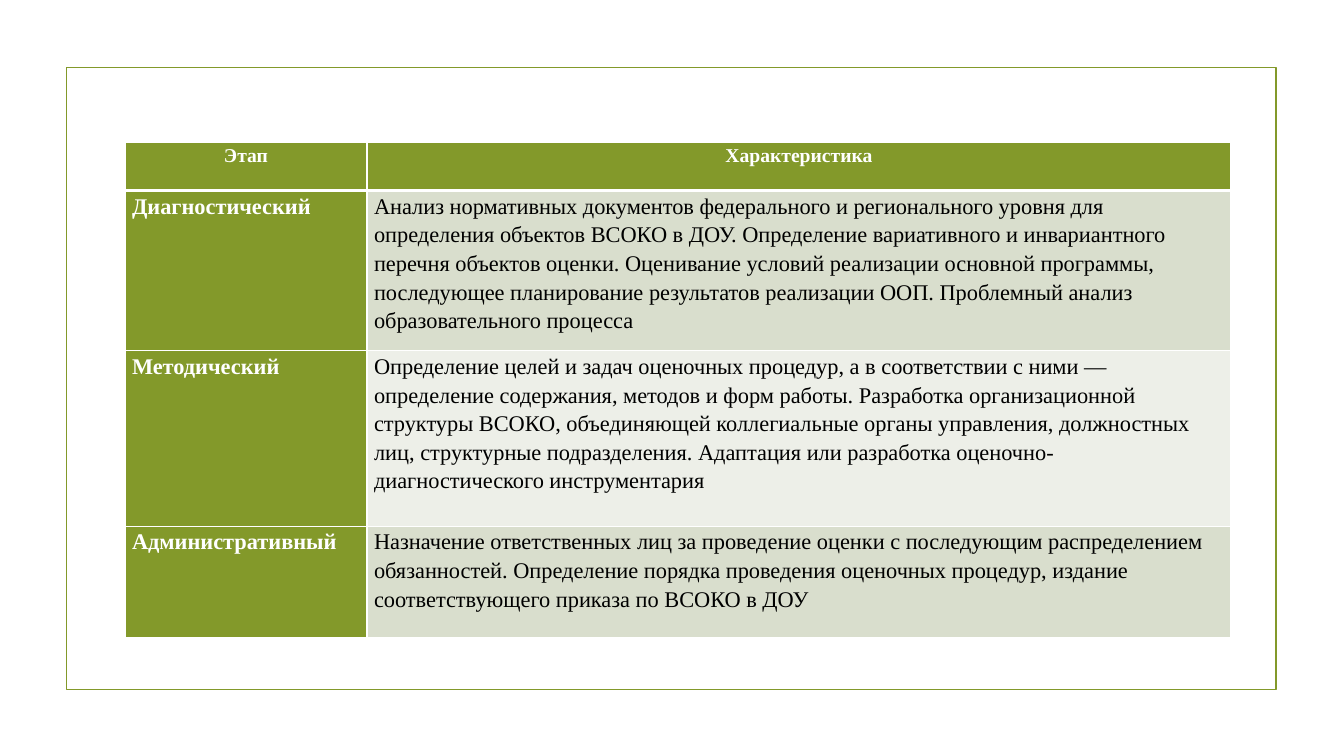
import dataclasses
import pptx
import pptx.dml.color
import pptx.enum.shapes
import pptx.enum.text
import pptx.oxml
import pptx.oxml.ns
import pptx.util

PX = 9144


@dataclasses.dataclass(frozen=True)
class Theme:
    font: str = "Times New Roman"
    green: str = "83992A"
    white: str = "FFFFFF"
    black: str = "000000"
    bands: tuple[str, str] = ("D9DECD", "EDEFE8")
    head: int = 14
    body: int = 16
    frame: float = 1.25
    thin: int = 1
    thick: int = 3


@dataclasses.dataclass(frozen=True)
class Stage:
    name: str
    text: str
    height: int


THEME = Theme()
WIDTHS = (240, 857)
STAGES = (
    Stage("Этап", "Характеристика", 48),
    Stage(
        "Диагностический",
        "Анализ нормативных документов федерального и регионального уровня для "
        "определения объектов ВСОКО в ДОУ. Определение вариативного и инвариантного "
        "перечня объектов оценки. Оценивание условий реализации основной программы, "
        "последующее планирование результатов реализации ООП. Проблемный анализ "
        "образовательного процесса",
        159,
    ),
    Stage(
        "Методический",
        "Определение целей и задач оценочных процедур, а в соответствии с ними — "
        "определение содержания, методов и форм работы. Разработка организационной "
        "структуры ВСОКО, объединяющей коллегиальные органы управления, должностных "
        "лиц, структурные подразделения. Адаптация или разработка "
        "оценочно-диагностического инструментария",
        174,
    ),
    Stage(
        "Административный",
        "Назначение ответственных лиц за проведение оценки с последующим "
        "распределением обязанностей. Определение порядка проведения оценочных "
        "процедур, издание соответствующего приказа по ВСОКО в ДОУ",
        111,
    ),
)


def px(size: int) -> pptx.util.Emu:
    return pptx.util.Emu(size * PX)


def rgb(code: str) -> pptx.dml.color.RGBColor:
    return pptx.dml.color.RGBColor.from_string(code)


def draw_frame(slide) -> None:
    frame = slide.shapes.add_shape(
        pptx.enum.shapes.MSO_SHAPE.RECTANGLE, px(66), px(67), px(1200), px(617)
    )
    frame.shadow.inherit = False
    frame.fill.background()
    frame.line.color.rgb = rgb(THEME.green)
    frame.line.width = pptx.util.Pt(THEME.frame)


def add_edges(cell, row: int) -> None:
    props = cell._tc.get_or_add_tcPr()
    thick = {0: "B", 1: "T"}.get(row)
    for spot, side in enumerate("LRTB"):
        size = THEME.thick if side == thick else THEME.thin
        edge = pptx.oxml.parse_xml(
            f'<a:ln{side} {pptx.oxml.ns.nsdecls("a")} w="{pptx.util.Pt(size)}">'
            f'<a:solidFill><a:srgbClr val="{THEME.white}"/></a:solidFill>'
            f"</a:ln{side}>"
        )
        props.insert(spot, edge)


def fill_cell(cell, text: str, row: int, col: int) -> None:
    head = row == 0
    label = head or col == 0
    cell.margin_left = cell.margin_right = px(7)
    cell.margin_top = cell.margin_bottom = 0
    cell.fill.solid()
    cell.fill.fore_color.rgb = rgb(THEME.green if label else THEME.bands[(row - 1) % 2])
    add_edges(cell, row)
    cell.text_frame.text = text
    para = cell.text_frame.paragraphs[0]
    para.line_spacing = 1.15
    align = pptx.enum.text.PP_ALIGN
    para.alignment = align.CENTER if head else align.LEFT
    font = para.runs[0].font
    font.name = THEME.font
    font.size = pptx.util.Pt(THEME.head if head else THEME.body)
    font.bold = label
    font.color.rgb = rgb(THEME.white if label else THEME.black)


def draw_table(slide) -> None:
    height = sum(stage.height for stage in STAGES)
    table = slide.shapes.add_table(
        len(STAGES), len(WIDTHS), px(124), px(141), px(sum(WIDTHS)), px(height)
    ).table
    for column, width in zip(table.columns, WIDTHS):
        column.width = px(width)
    for row, stage in enumerate(STAGES):
        table.rows[row].height = px(stage.height)
        for col, text in enumerate((stage.name, stage.text)):
            fill_cell(table.cell(row, col), text, row, col)


def main() -> None:
    deck = pptx.Presentation()
    deck.slide_width, deck.slide_height = px(1333), px(750)
    slide = deck.slides.add_slide(deck.slide_layouts[6])
    slide.background.fill.solid()
    slide.background.fill.fore_color.rgb = rgb(THEME.white)
    draw_frame(slide)
    draw_table(slide)
    deck.save("out.pptx")


if __name__ == "__main__":
    main()
